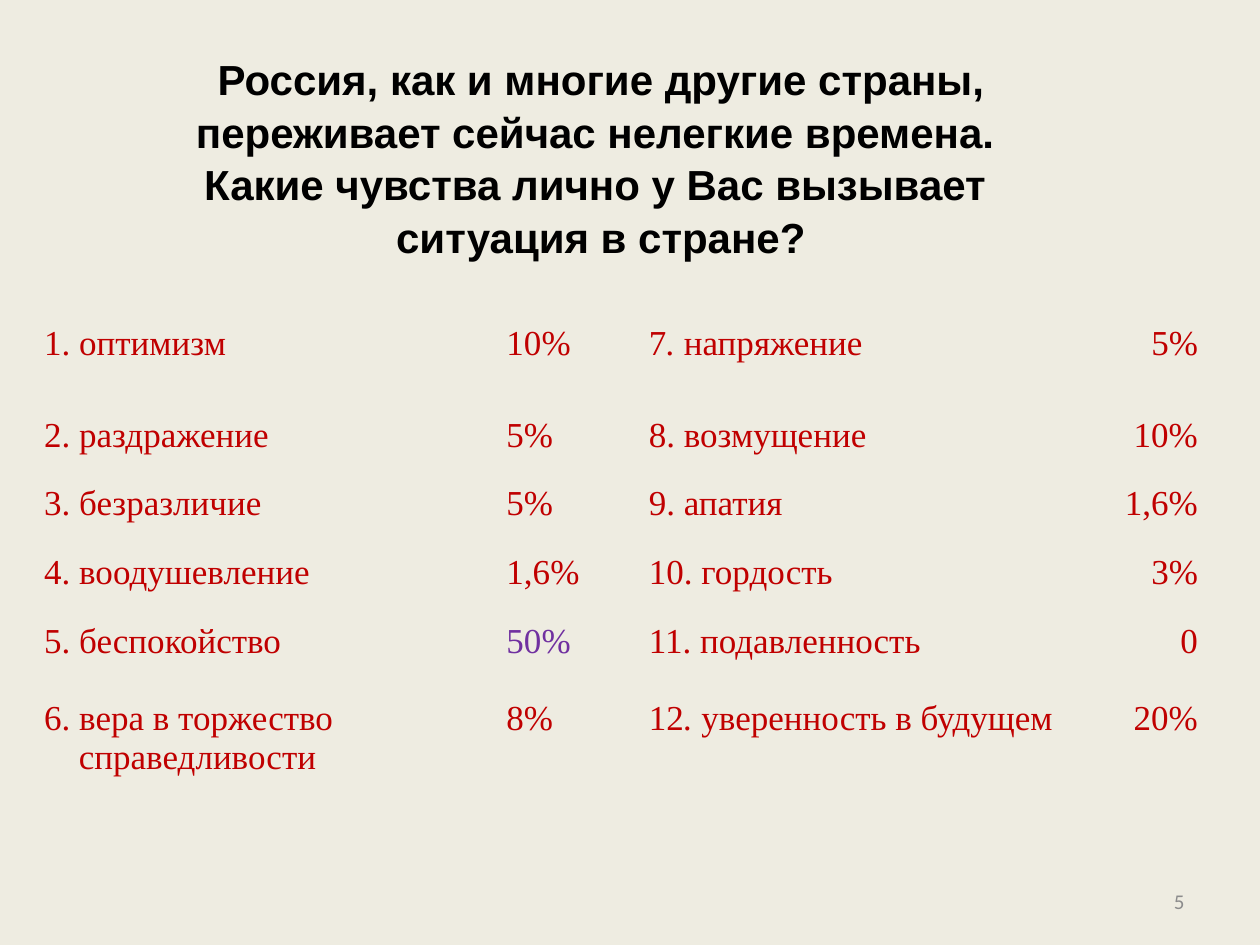
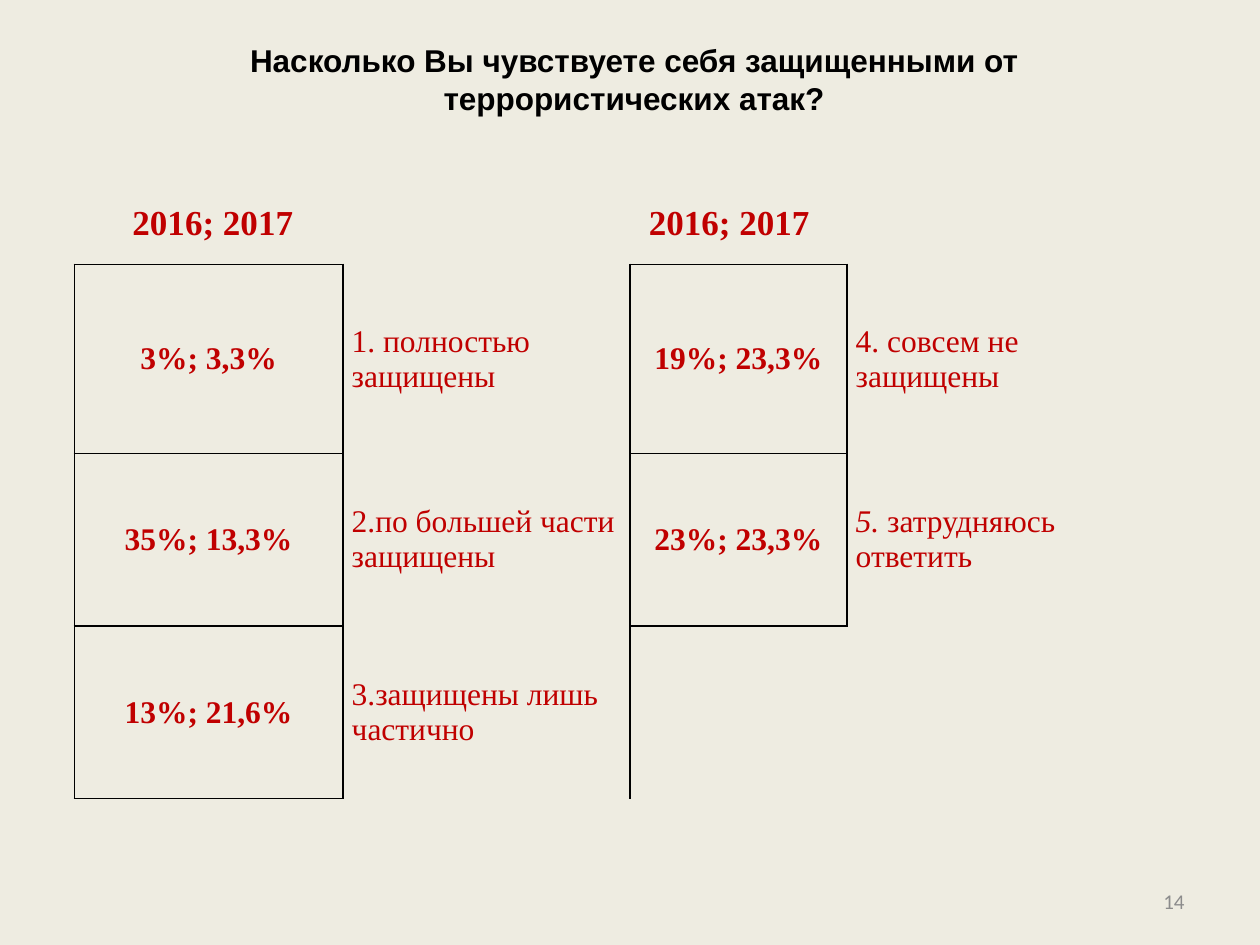
"""Build two survey slides: feelings about the country and sense of safety."""
from collections import namedtuple
from dataclasses import dataclass, replace

import pptx
import pptx.dml.color
import pptx.enum.text
import pptx.oxml.ns
import pptx.util
from lxml import etree
from pptx.util import Cm

Box = namedtuple("Box", "left top width height")
Align = pptx.enum.text.PP_ALIGN
Anchor = pptx.enum.text.MSO_ANCHOR
qn = pptx.oxml.ns.qn
NO_TABLE_STYLE = "{2D5ABB26-0587-4C30-8999-92F81FD0307C}"


@dataclass(frozen=True)
class Style:
    """Look of one run of text."""
    font: str
    size: int
    color: str
    bold: bool = False
    italic: bool = False


class Theme:
    """Colours and type styles shared by the slides."""
    background = "EEECE1"
    border = "000000"
    title = Style("Arial", 24, "000000", bold=True)
    small_title = replace(title, size=18)
    number = Style("Calibri", 12, "8C8C8C")
    answer = Style("Times New Roman", 20, "C00000")
    leading_answer = replace(answer, color="7030A0")
    years = replace(answer, bold=True)
    option = replace(answer, size=18)
    share = replace(option, bold=True)


FEELINGS = [
    (["1. оптимизм"], "10%", ["7", ".", " напряжение"], "5%"),
    (["2. раздражение"], "5%", ["8. возмущение"], "10%"),
    (["3. безразличие"], "5%", ["9. апатия"], "1,6%"),
    (["4. воодушевление"], "1,6%", ["10. гордость"], "3%"),
    (["5. беспокойство"], "50%", ["11. подавленность"], "0"),
    (["6. вера в торжество", "справедливости"], "8%",
     ["12", ". ", "уверенность в будущем"], "20%"),
]
SAFETY = [
    ("3%; 3,3%", ["1. полностью защищены"], "19%; 23,3%", ["4. совсем не защищены"]),
    ("35%; 13,3%", ["2.по большей части защищены"], "23%; 23,3%",
     ["", "5. ", "затрудняюсь ответить"]),
    ("13%; 21,6%", ["3.защищены лишь частично"], "", []),
]


def write(para, style, *texts, align=Align.LEFT):
    """Add runs to a paragraph; the second of several runs is italic."""
    para.alignment = align
    for index, text in enumerate(texts):
        if not text:
            continue
        span = para.add_run()
        span.text = text
        span.font.name = style.font
        span.font.size = pptx.util.Pt(style.size)
        span.font.bold = style.bold
        span.font.italic = index == 1 and len(texts) > 2
        span.font.color.rgb = pptx.dml.color.RGBColor.from_string(style.color)


def add_title(page, box, style, lines, bottom=0.13, spacing=1.0):
    """Place the title placeholder and fill it with centred lines."""
    title = page.shapes.title
    title.left, title.top, title.width, title.height = map(Cm, box)
    frame = title.text_frame
    frame.word_wrap = True
    frame.auto_size = pptx.enum.text.MSO_AUTO_SIZE.NONE
    frame.vertical_anchor = Anchor.MIDDLE
    frame.margin_left = frame.margin_right = Cm(0.6)
    frame.margin_top, frame.margin_bottom = Cm(0.13), Cm(bottom)
    for index, line in enumerate(lines):
        para = frame.add_paragraph() if index else frame.paragraphs[0]
        para.line_spacing = spacing
        para.space_before = pptx.util.Pt(0)
        write(para, style, line, align=Align.CENTER)


def add_number(page, box, number):
    """Write the slide number at the lower right."""
    frame = page.shapes.add_textbox(*map(Cm, box)).text_frame
    frame.word_wrap = True
    frame.vertical_anchor = Anchor.MIDDLE
    write(frame.paragraphs[0], Theme.number, str(number), align=Align.RIGHT)


def add_grid(page, box, widths, heights, anchor=Anchor.TOP):
    """Add a plain table without fills and return it."""
    frame = page.shapes.add_table(len(heights), len(widths), *map(Cm, box))
    table = frame.table
    table.first_row = table.horz_banding = False
    frame._element.find(".//" + qn("a:tableStyleId")).text = NO_TABLE_STYLE
    for column, width in zip(table.columns, widths):
        column.width = Cm(width)
    for row, height in zip(table.rows, heights):
        row.height = Cm(height)
    for cell in table.iter_cells():
        cell.margin_left = cell.margin_right = Cm(0.18)
        cell.margin_top = cell.margin_bottom = 0
        cell.vertical_anchor = anchor
        cell.fill.background()
    return table


def add_right_tab(para, position):
    """Give a paragraph one right-aligned tab stop."""
    stops = etree.SubElement(para._p.get_or_add_pPr(), qn("a:tabLst"))
    etree.SubElement(stops, qn("a:tab"), pos=str(Cm(position)), algn="r")


def draw_borders(table, boxed):
    """Draw lines on every edge that touches a boxed cell."""
    sides = {"a:lnL": (0, -1), "a:lnR": (0, 1), "a:lnT": (-1, 0), "a:lnB": (1, 0)}
    for row in range(len(table.rows)):
        for column in range(len(table.columns)):
            properties = table.cell(row, column)._tc.get_or_add_tcPr()
            edges = [tag for tag, (down, across) in sides.items()
                     if {(row, column), (row + down, column + across)} & boxed]
            for index, tag in enumerate(edges):
                line = etree.Element(qn(tag), w=str(pptx.util.Pt(1)))
                fill = etree.SubElement(line, qn("a:solidFill"))
                etree.SubElement(fill, qn("a:srgbClr"), val=Theme.border)
                properties.insert(index, line)


def add_feelings(page, box):
    """Fill the table of feelings with numbered answers and shares."""
    widths = [9.32, 2.87, box.width - 12.19]
    heights = [1.85] + [1.39] * 4 + [box.height - 7.41]
    table = add_grid(page, box, widths, heights)
    for row, (names, share, other, other_share) in enumerate(FEELINGS):
        cells = [table.cell(row, column) for column in range(3)]
        write(cells[0].text_frame.paragraphs[0], Theme.answer, names[0])
        for name in names[1:]:
            para = cells[0].text_frame.add_paragraph()
            para._p.get_or_add_pPr().set("marL", str(Cm(0.7)))
            write(para, Theme.answer, name)
        style = Theme.leading_answer if share == "50%" else Theme.answer
        write(cells[1].text_frame.paragraphs[0], style, share)
        para = cells[2].text_frame.paragraphs[0]
        add_right_tab(para, 11.07)
        write(para, Theme.answer, *other[:-1], other[-1] + "\t" + other_share)
    for cell in cells:
        cell.margin_top = Cm(0.16)


def add_safety(page, box):
    """Fill the table of safety answers and frame its shares."""
    widths = [5.41, 5.79, 4.37, box.width - 15.57]
    table = add_grid(page, box, widths, [3.81, 3.48, 3.48], Anchor.MIDDLE)
    boxed = set()
    for row, answers in enumerate(SAFETY):
        for column, answer in enumerate(answers):
            para = table.cell(row, column).text_frame.paragraphs[0]
            if column % 2:
                write(para, Theme.option, *answer)
            elif answer:
                write(para, Theme.share, answer, align=Align.CENTER)
                boxed.add((row, column))
    draw_borders(table, boxed)


def add_years(page, box):
    """Label a column of shares with its survey years."""
    table = add_grid(page, box, [box.width], [box.height])
    write(table.cell(0, 0).text_frame.paragraphs[0], Theme.years, "2016; 2017")


def add_page(deck, number):
    """Add a title-only slide with its number."""
    page = deck.slides.add_slide(deck.slide_layouts[5])
    add_number(page, Box(18.21, 17.65, 5.92, 1.02), number)
    return page


def build_feelings_page(deck):
    """Build the slide on feelings about the country."""
    page = add_page(deck, 5)
    add_title(page, Box(1.5, 0.91, 21.23, 5.13), Theme.title, [
        "Россия, как и многие другие страны, переживает сейчас нелегкие времена. ",
        "Какие чувства лично у Вас вызывает ",
        "ситуация в стране?",
    ], bottom=0.76, spacing=1.04)
    add_feelings(page, Box(0.71, 6.53, 23.8, 10.2))


def build_safety_page(deck):
    """Build the slide on protection from attacks."""
    page = add_page(deck, 14)
    add_title(page, Box(2.97, 0.69, 19.63, 1.8), Theme.small_title, [
        "Насколько Вы чувствуете себя защищенными от террористических атак?"])
    add_safety(page, Box(1.5, 5.33, 21.08, 10.77))
    for left in (2.49, 12.9):
        add_years(page, Box(left, 4.11, 4.47, 1.04))


def main():
    """Create the deck and save it."""
    deck = pptx.Presentation()
    deck.slide_width, deck.slide_height = Cm(25.4), Cm(19.05)
    fill = deck.slide_master.background.fill
    fill.solid()
    fill.fore_color.rgb = pptx.dml.color.RGBColor.from_string(Theme.background)
    build_feelings_page(deck)
    build_safety_page(deck)
    deck.save("out.pptx")


if __name__ == "__main__":
    main()
